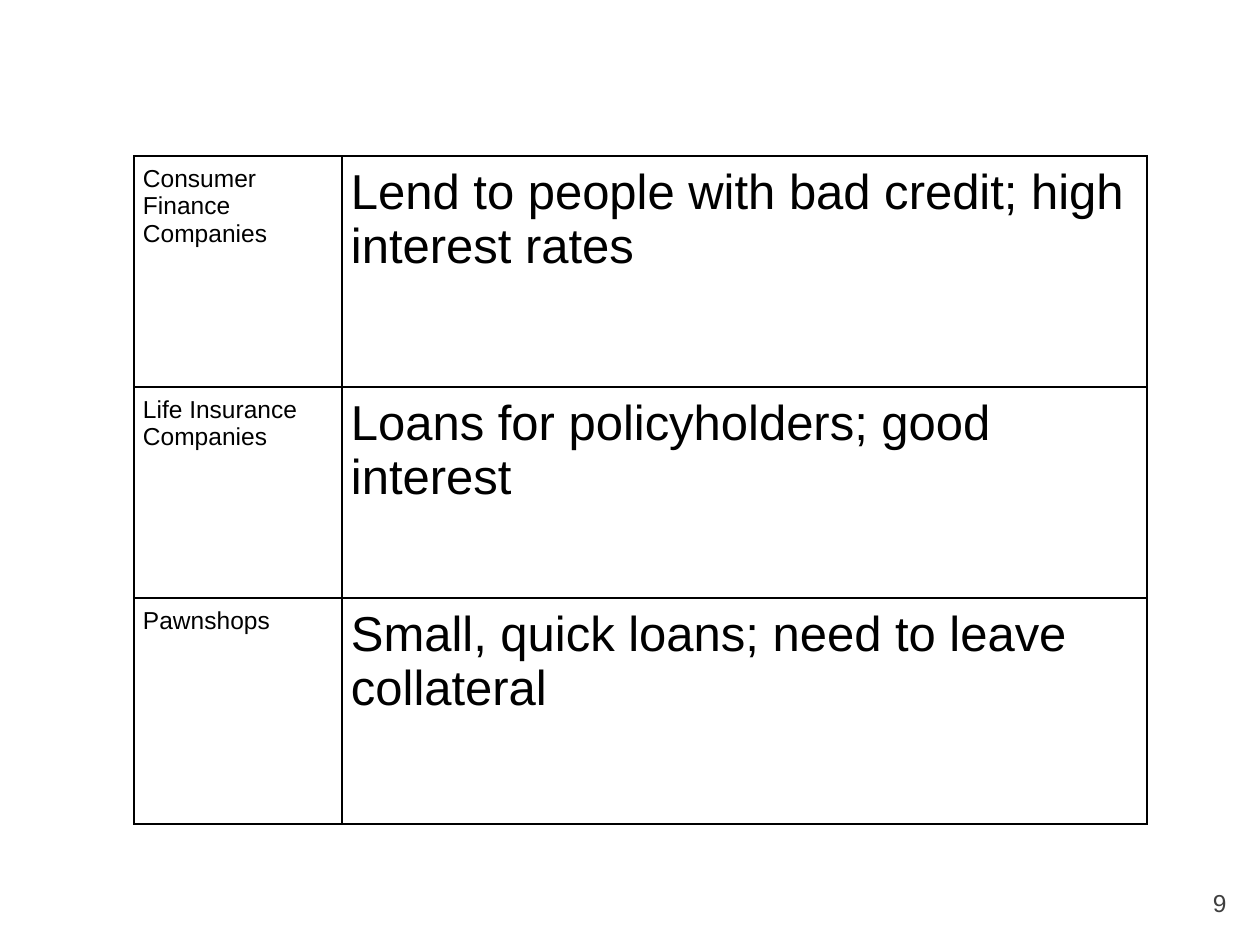
from lxml.etree import SubElement
from pptx import Presentation
from pptx.dml.color import RGBColor
from pptx.enum.text import PP_ALIGN
from pptx.oxml.ns import qn
from pptx.util import Inches, Pt

EMU_PER_PX = Inches(1) / 126
BLACK = "000000"
LENDERS = [
    ("Consumer Finance Companies", "Lend to people with bad credit; high interest rates"),
    ("Life Insurance Companies", "Loans for policyholders; good interest"),
    ("Pawnshops", "Small, quick loans; need to leave collateral"),
]
COLUMN_WIDTHS = [208, 805]
ROW_HEIGHTS = [231, 211, 226]
FONT_SIZES = [14, 28]


def px(length):
    return round(length * EMU_PER_PX)


def write(text_frame, text, size, color):
    text_frame.text = text
    font = text_frame.paragraphs[0].runs[0].font
    font.name = "Arial"
    font.size = Pt(size)
    font.color.rgb = RGBColor.from_string(color)


presentation = Presentation()
presentation.slide_width = Inches(10)
presentation.slide_height = Inches(7.5)
slide = presentation.slides.add_slide(presentation.slide_layouts[6])

# Table of lenders
table = slide.shapes.add_table(
    len(ROW_HEIGHTS), len(COLUMN_WIDTHS),
    px(134), px(156), px(sum(COLUMN_WIDTHS)), px(sum(ROW_HEIGHTS)),
).table
table.first_row = False
table.horz_banding = False
for column, width in zip(table.columns, COLUMN_WIDTHS):
    column.width = px(width)
for row, height, texts in zip(table.rows, ROW_HEIGHTS, LENDERS):
    row.height = px(height)
    for cell, text, size in zip(row.cells, texts, FONT_SIZES):
        write(cell.text_frame, text, size, BLACK)
        cell.margin_left = cell.margin_right = px(9)
        cell.margin_top = cell.margin_bottom = px(9)
        # Borders must come before the fill in the cell properties
        properties = cell._tc.get_or_add_tcPr()
        for side in ("lnL", "lnR", "lnT", "lnB"):
            border = SubElement(properties, qn(f"a:{side}"), w=str(Pt(1)))
            border_fill = SubElement(border, qn("a:solidFill"))
            SubElement(border_fill, qn("a:srgbClr"), val=BLACK)
        cell.fill.background()

# Page number
page_number = slide.shapes.add_textbox(px(1176), px(882), px(63), px(63))
page_number.text_frame.word_wrap = True
write(page_number.text_frame, "9", 14, "3F3F3F")
page_number.text_frame.paragraphs[0].alignment = PP_ALIGN.RIGHT

presentation.save("out.pptx")
